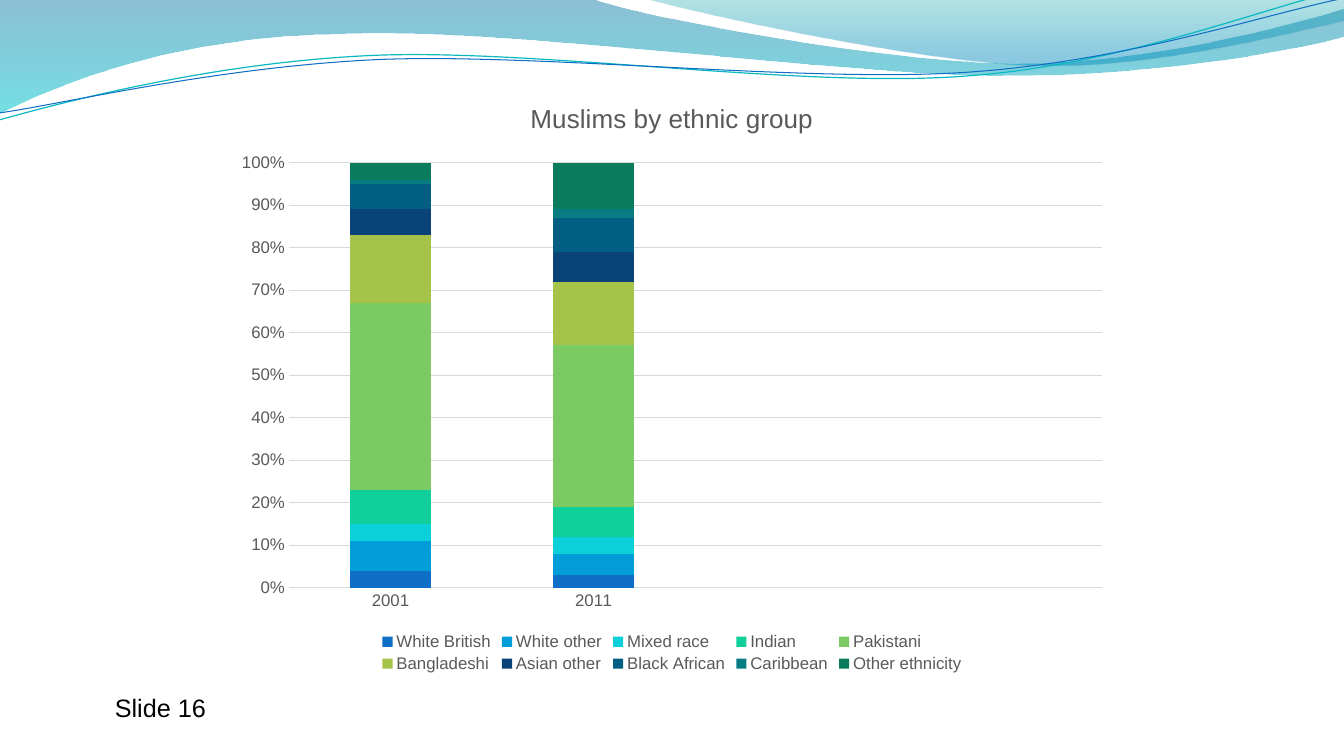
from lxml import etree
from pptx import Presentation
from pptx.chart.data import CategoryChartData
from pptx.dml.color import RGBColor
from pptx.enum.chart import XL_CHART_TYPE, XL_LEGEND_POSITION, XL_TICK_MARK
from pptx.enum.text import MSO_AUTO_SIZE
from pptx.oxml.ns import qn
from pptx.util import Inches, Pt

STACKED_100 = XL_CHART_TYPE.COLUMN_STACKED_100
LEGEND_BOTTOM = XL_LEGEND_POSITION.BOTTOM
NO_TICK = XL_TICK_MARK.NONE
FIT_SHAPE = MSO_AUTO_SIZE.SHAPE_TO_FIT_TEXT

WIDTH, HEIGHT = Inches(13.33), Inches(7.5)
FONT = "Arial"
GREY, GRID_GREY = "595959", "D9D9D9"

YEARS = ["2001", "2011", "", ""]
ETHNIC_GROUPS = [
    ("White British", (4, 3), "0F6FC6"),
    ("White other", (7, 5), "009DD9"),
    ("Mixed race", (4, 4), "0BD0D9"),
    ("Indian", (8, 7), "10CF9B"),
    ("Pakistani", (44, 38), "7CCA62"),
    ("Bangladeshi", (16, 15), "A5C249"),
    ("Asian other", (6, 7), "094377"),
    ("Black African", (6, 8), "005E82"),
    ("Caribbean", (1, 2), "077D82"),
    ("Other ethnicity", (4, 11), "0A7C5D"),
]

# Each outline is a start point, then line ends (x, y) or Bezier triples, in inches.
# Each gradient stop is position, colour, opacity.
WAVE_BANDS = [
    ([(0, 0), (5.87, -0.01), (6.34, 0.17, 8.85, 0.63, 10.11, 0.63),
      (11.38, 0.63, 12.78, 0.26, 13.33, 0.09), (13.35, 0.36),
      (13.11, 0.44, 11.6, 0.76, 9.94, 0.75), (8.29, 0.75, 5.09, 0.28, 3.43, 0.34),
      (1.72, 0.36, 0.61, 0.83, -0.01, 1.13), (0, 0)],
     [(0, "0074A1", 0.45), (1, "00C6CF", 0.55)]),
    ([(6.39, -0.01), (6.79, 0.11, 9.09, 0.62, 10.25, 0.65),
      (11.41, 0.69, 12.82, 0.32, 13.33, 0.21), (13.33, 0), (6.39, -0.01)],
     [(0, "00A1A9", 0.3), (0.8, "008BBF", 0.45)]),
]
WAVE_LINES = [
    ([(-0.01, 1.19), (0.64, 1.01, 2.11, 0.62, 3.69, 0.55),
      (5.27, 0.48, 7.9, 0.87, 9.5, 0.76), (11.1, 0.66, 12.52, 0.08, 13.31, -0.1)],
     "0AB8BF", 0.85),
    ([(0, 1.12), (0.63, 1.03, 2.18, 0.66, 3.78, 0.59),
      (5.37, 0.53, 7.96, 0.82, 9.55, 0.72), (11.15, 0.62, 12.55, 0.14, 13.34, -0.02)],
     "0F6FC6", 0.75),
]


def rgb(hex_colour):
    return RGBColor.from_string(hex_colour)


def style_font(font, size, colour):
    font.name, font.size, font.bold = FONT, Pt(size), False
    font.color.rgb = rgb(colour)


def style_line(line, colour, width):
    line.color.rgb = rgb(colour)
    line.width = Pt(width)


def add_outline(slide, outline, close):
    """Draw the outline through its control points, then turn each triple into a curve."""
    start, *rest = [(Inches(segment[i]), Inches(segment[i + 1]))
                    for segment in outline for i in range(0, len(segment), 2)]
    builder = slide.shapes.build_freeform(*start)
    builder.add_line_segments(rest, close=close)
    shape = builder.convert_to_shape()
    shape.shadow.inherit = False
    steps = iter(list(shape.element.iter(qn("a:lnTo"))))
    for segment in outline[1:]:
        first = next(steps)
        if len(segment) == 6:
            first.tag = qn("a:cubicBezTo")
            for _ in range(2):
                step = next(steps)
                first.append(step[0])
                step.getparent().remove(step)
    return shape


def add_wave_band(slide, outline, stops):
    band = add_outline(slide, outline, close=True)
    band.line.fill.background()
    band.fill.gradient()
    band.fill.gradient_angle = 270
    for stop, (position, colour, _) in zip(band.fill.gradient_stops, stops):
        stop.position = position
        stop.color.rgb = rgb(colour)
    for node, (_, _, opacity) in zip(band.element.iter(qn("a:srgbClr")), stops):
        etree.SubElement(node, qn("a:alpha")).set("val", str(round(opacity * 100000)))


def add_wave_line(slide, outline, colour, width):
    wave = add_outline(slide, outline, close=False)
    wave.fill.background()
    style_line(wave.line, colour, width)


def style_axes(chart):
    for axis in (chart.category_axis, chart.value_axis):
        axis.major_tick_mark = axis.minor_tick_mark = NO_TICK
        style_font(axis.tick_labels.font, 12, GREY)
    style_line(chart.category_axis.format.line, GRID_GREY, 0.75)
    percent = chart.value_axis
    percent.format.line.fill.background()
    style_line(percent.major_gridlines.format.line, GRID_GREY, 0.75)
    percent.tick_labels.number_format = "0%"
    percent.tick_labels.number_format_is_linked = False


def add_ethnicity_chart(slide):
    shares = CategoryChartData()
    shares.categories = YEARS
    for group, values, _ in ETHNIC_GROUPS:
        shares.add_series(group, values + (None, None))
    chart = slide.shapes.add_chart(
        STACKED_100, round(WIDTH / 6), round(HEIGHT * 0.105),
        round(WIDTH * 2 / 3), round(HEIGHT * 0.79), shares).chart
    style_font(chart.font, 10, "000000")

    chart.chart_title.text_frame.text = "Muslims by ethnic group"
    heading = chart.chart_title.text_frame.paragraphs[0]
    for font in (heading.font, heading.runs[0].font):
        style_font(font, 18.6, GREY)
    chart.chart_title.include_in_layout = False

    chart.has_legend = True
    chart.legend.position = LEGEND_BOTTOM
    chart.legend.include_in_layout = False
    style_font(chart.legend.font, 12, GREY)

    style_axes(chart)
    columns = chart.plots[0]
    columns.gap_width, columns.overlap = 150, 100
    columns.vary_by_categories = False
    for series, (_, _, colour) in zip(columns.series, ETHNIC_GROUPS):
        series.format.fill.solid()
        series.format.fill.fore_color.rgb = rgb(colour)


def add_slide_label(slide, label):
    frame = slide.shapes.add_textbox(
        Inches(1.04), Inches(6.82), Inches(1.18), Inches(0.4)).text_frame
    frame.word_wrap = True
    frame.auto_size = FIT_SHAPE
    frame.text = label
    style_font(frame.paragraphs[0].runs[0].font, 18, "000000")


def main():
    deck = Presentation()
    deck.slide_width, deck.slide_height = WIDTH, HEIGHT
    slide = deck.slides.add_slide(deck.slide_layouts[6])
    for outline, stops in WAVE_BANDS:
        add_wave_band(slide, outline, stops)
    for outline, colour, width in WAVE_LINES:
        add_wave_line(slide, outline, colour, width)
    add_ethnicity_chart(slide)
    add_slide_label(slide, "Slide 16")
    deck.save("out.pptx")


if __name__ == "__main__":
    main()
